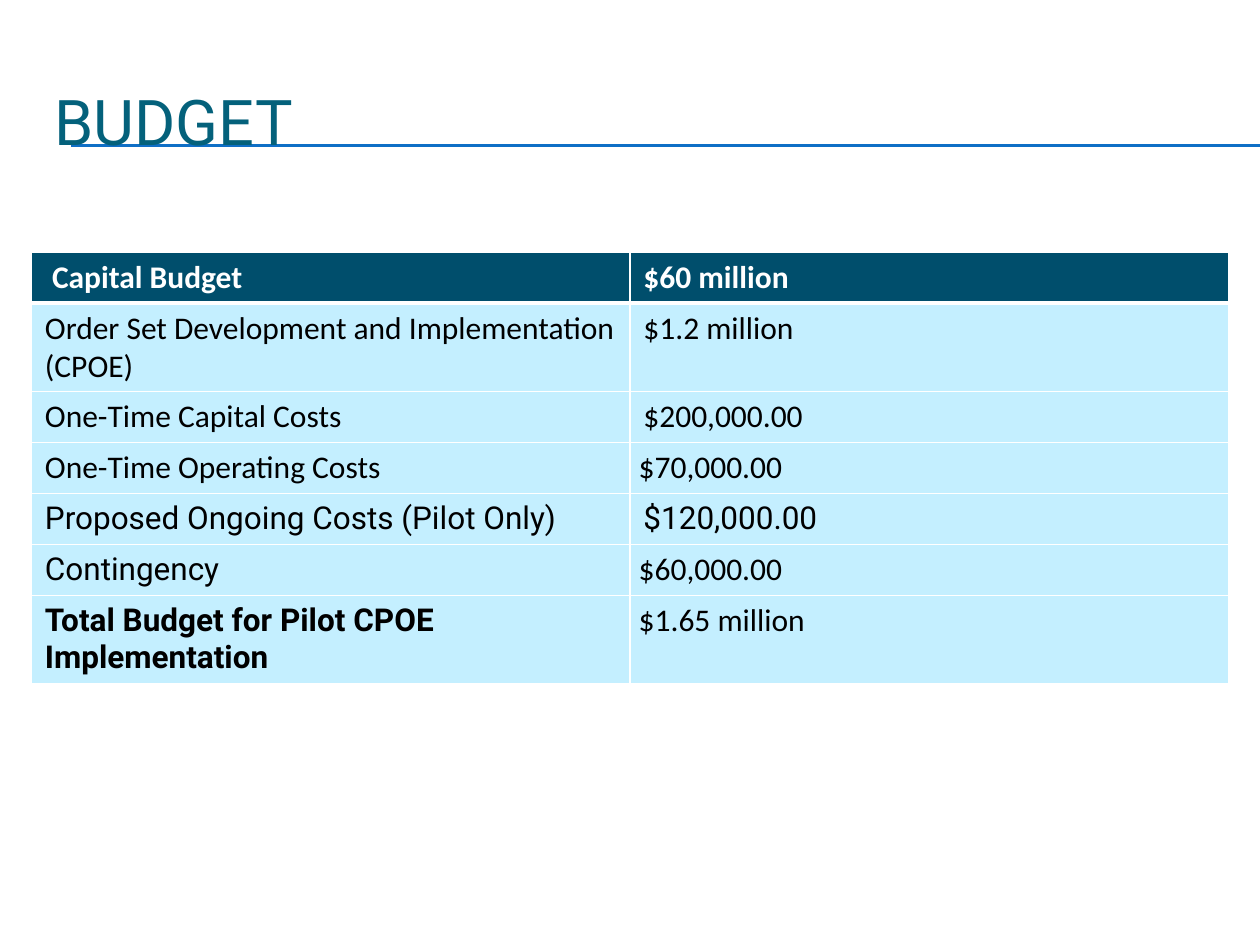
from dataclasses import dataclass

from lxml.etree import SubElement
from pptx import Presentation
from pptx.dml.color import RGBColor as Color
from pptx.enum.shapes import MSO_CONNECTOR as Connector
from pptx.enum.text import MSO_ANCHOR as Anchor
from pptx.oxml.ns import qn
from pptx.util import Pt

TITLE = "BUDGET"
BODY, HEADING = "Calibri", "Roboto"
BUDGET = [
    ((" Capital Budget", BODY), ("$60 million", BODY)),
    (("Order Set Development and Implementation (CPOE)", BODY), ("$1.2 million", BODY)),
    (("One-Time Capital Costs", BODY), ("$200,000.00", BODY)),
    (("One-Time Operating Costs", BODY), ("$70,000.00", BODY)),
    (("Proposed Ongoing Costs (Pilot Only)", HEADING), ("$120,000.00", HEADING)),
    (("Contingency", HEADING), ("$60,000.00", BODY)),
    (("Total Budget for Pilot CPOE Implementation", HEADING), ("$1.65 million", BODY)),
]
BOLD_CELLS = {(0, 0), (0, 1), (6, 0)}
TIGHT_CELLS = {(3, 1), (5, 1), (6, 1)}


@dataclass(frozen=True)
class Theme:
    title: str = "04617B"
    rule: str = "0F6FC6"
    header: str = "004E6C"
    row: str = "C4EFFF"
    light: str = "FFFFFF"
    dark: str = "000000"
    title_size: int = 36
    cell_size: int = 18


THEME = Theme()


def style_run(para, font, size, color, bold=False):
    span = para.runs[0].font
    span.name, span.size, span.bold = font, Pt(size), bold
    span.color.rgb = Color.from_string(color)


def add_rule(page, y):
    rule = page.shapes.add_connector(Connector.STRAIGHT, Pt(40.5), Pt(y), Pt(720), Pt(y))
    rule.line.color.rgb = Color.from_string(THEME.rule)
    rule.line.width = Pt(0.75)
    SubElement(rule._element.spPr, qn("a:effectLst"))


def add_title(page):
    box = page.shapes.add_textbox(Pt(24), Pt(36), Pt(684), Pt(66))
    frame = box.text_frame
    frame.word_wrap = True
    frame.vertical_anchor = Anchor.MIDDLE
    frame.text = TITLE
    style_run(frame.paragraphs[0], HEADING, THEME.title_size, THEME.title)


def add_borders(cell, bottom):
    properties = cell._tc.get_or_add_tcPr()
    for side, width in (("L", 1), ("R", 1), ("T", 1), ("B", bottom)):
        line = SubElement(properties, qn(f"a:ln{side}"), w=str(Pt(width)))
        fill = SubElement(line, qn("a:solidFill"))
        SubElement(fill, qn("a:srgbClr"), val=THEME.light)


def fill_cell(cell, text, font, position):
    is_header = position[0] == 0
    is_tight = position in TIGHT_CELLS
    add_borders(cell, 3 if is_header else 1)
    cell.fill.solid()
    cell.fill.fore_color.rgb = Color.from_string(THEME.header if is_header else THEME.row)
    cell.margin_left = cell.margin_right = Pt(5 if is_tight else 7.7)
    cell.margin_top = cell.margin_bottom = Pt(0 if is_tight else 3.6)
    cell.text_frame.text = text
    para = cell.text_frame.paragraphs[0]
    if is_tight:
        para.line_spacing = 1.15
    color = THEME.light if is_header else THEME.dark
    style_run(para, font, THEME.cell_size, color, position in BOLD_CELLS)


def add_budget(page):
    table = page.shapes.add_table(
        len(BUDGET), len(BUDGET[0]), Pt(18), Pt(144), Pt(684), Pt(247)
    ).table
    for r, entries in enumerate(BUDGET):
        table.rows[r].height = Pt(29.2)
        for c, (text, font) in enumerate(entries):
            fill_cell(table.cell(r, c), text, font, (r, c))


def main():
    deck = Presentation()
    deck.slide_width, deck.slide_height = Pt(720), Pt(540)
    page = deck.slides.add_slide(deck.slide_layouts[6])
    for y in (82.8, 83.5):
        add_rule(page, y)
    add_title(page)
    add_budget(page)
    deck.save("out.pptx")


if __name__ == "__main__":
    main()
